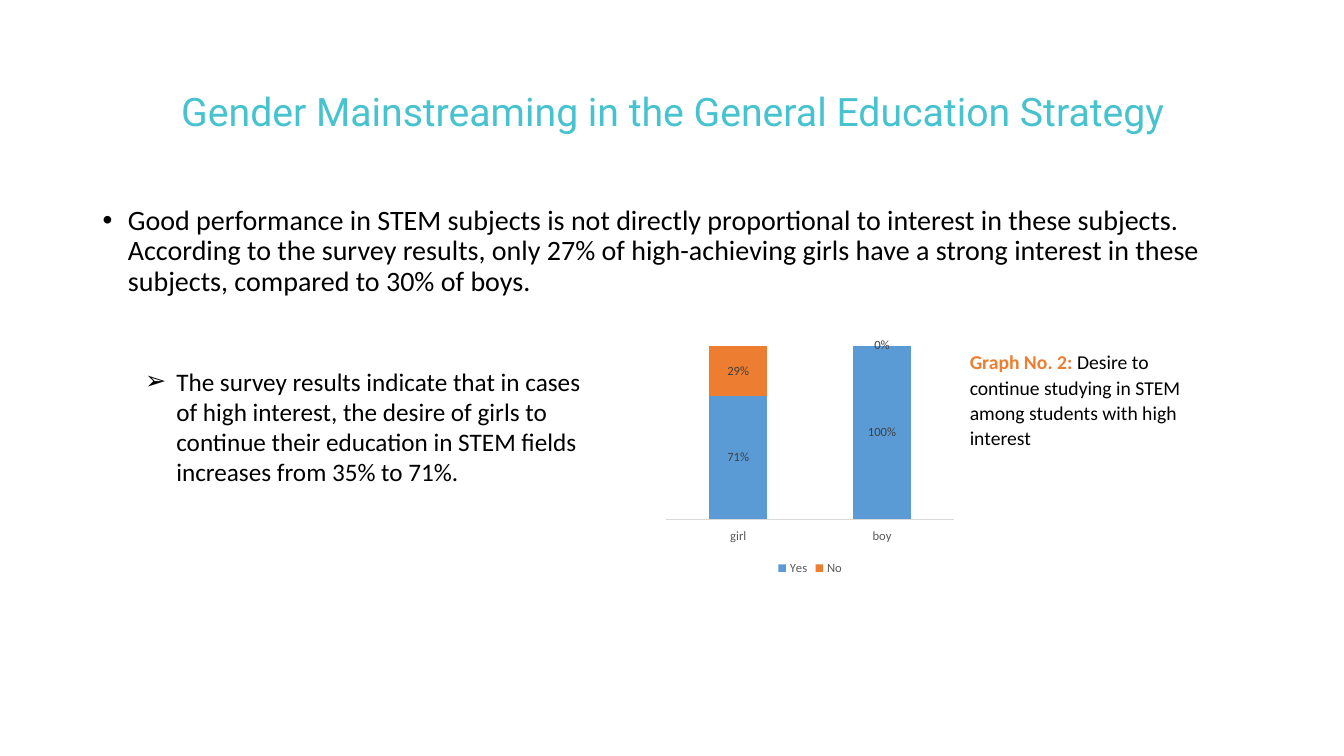
from pptx import Presentation
from pptx.chart.data import CategoryChartData as Data
from pptx.dml.color import RGBColor as RGB
from pptx.enum.chart import XL_CHART_TYPE as Kind, XL_LABEL_POSITION as Spot
from pptx.enum.chart import XL_LEGEND_POSITION as Side, XL_TICK_LABEL_POSITION as Tag
from pptx.enum.chart import XL_TICK_MARK as Tick
from pptx.enum.text import MSO_ANCHOR as Anchor, PP_ALIGN as Align
from pptx.oxml.ns import qn
from pptx.util import Pt
from lxml import etree

PX = 9144
THEME = {
    "title": ("Roboto", 28, "47C3D0"),
    "body": ("Calibri", 20, "000000"),
    "point": ("Calibri", 18, "000000"),
    "note": ("Calibri", 14, "000000"),
    "chart": ("Calibri", 10, "000000"),
    "axis": ("Calibri", 9, "595959"),
    "label": ("Calibri", 9, "404040"),
    "line": "D9D9D9",
    "yes": "5B9BD5",
    "no": "ED7D31",
}


def style(font, key):
    font.name, size, color = THEME[key]
    font.size = Pt(size)
    font.color.rgb = RGB.from_string(color)


def write(box, text, key, mark=None, indent=0):
    frame = slide.shapes.add_textbox(*[n * PX for n in box]).text_frame
    frame.word_wrap = True
    para = frame.paragraphs[0]
    para.text = text
    if mark:
        props = para._p.get_or_add_pPr()
        props.set("marL", str(indent * PX))
        props.set("indent", str(-indent * PX))
        etree.SubElement(props, qn("a:buFont"), typeface="Arial")
        etree.SubElement(props, qn("a:buChar"), char=mark)
    style(para.font, key)
    return para, frame


deck = Presentation()
deck.slide_width, deck.slide_height = 1333 * PX, 750 * PX
slide = deck.slides.add_slide(deck.slide_layouts[6])

title, frame = write((92, 40, 1150, 145),
                     "Gender Mainstreaming in the General Education Strategy", "title")
frame.vertical_anchor = Anchor.MIDDLE
title.alignment = Align.CENTER
title.line_spacing = 0.9

body, frame = write(
    (92, 200, 1186, 317),
    "Good performance in STEM subjects is not directly proportional to interest in these subjects. "
    "According to the survey results, only 27% of high-achieving girls have a strong interest in these "
    "subjects, compared to 30% of boys.", "body", "•", 25)
body.line_spacing = 0.9

data = Data(number_format="0%")
data.categories = ["girl", "boy"]
data.add_series("Yes", (0.71, 1))
data.add_series("No", (0.29, 0))
area = [n * PX for n in (655, 303, 297, 272)]
chart = slide.shapes.add_chart(Kind.COLUMN_STACKED, *area, data).chart
style(chart.font, "chart")
chart.has_title = False
chart.has_legend = True
chart.legend.position = Side.BOTTOM
chart.legend.include_in_layout = False
style(chart.legend.font, "axis")

base = chart.category_axis
base.major_tick_mark = base.minor_tick_mark = Tick.NONE
base.tick_label_position = Tag.LOW
base.format.line.color.rgb = RGB.from_string(THEME["line"])
base.format.line.width = Pt(0.75)
style(base.tick_labels.font, "axis")

scale = chart.value_axis
scale.visible = False
scale.has_major_gridlines = False
scale.minimum_scale, scale.maximum_scale = 0, 1.2

plot = chart.plots[0]
plot.gap_width, plot.overlap = 150, 100
plot.vary_by_categories = False
for series, key in zip(plot.series, ("yes", "no")):
    series.format.fill.solid()
    series.format.fill.fore_color.rgb = RGB.from_string(THEME[key])
    labels = series.data_labels
    labels.show_value = True
    labels.position = Spot.CENTER
    labels.number_format = "0%"
    labels.number_format_is_linked = False
    style(labels.font, "label")

note, frame = write((952, 341, 266, 111), "", "note")
note.line_spacing = 1.07
note.space_after = Pt(8)
lead = note.add_run()
lead.text = "Graph No. 2: "
lead.font.bold = True
lead.font.color.rgb = RGB.from_string(THEME["no"])
note.add_run().text = "Desire to continue studying in STEM among students with high interest"

write((134, 358, 475, 131),
      "The survey results indicate that in cases of high interest, the desire of girls to continue "
      "their education in STEM fields increases from 35% to 71%.", "point", "➢", 31)

deck.save("out.pptx")
